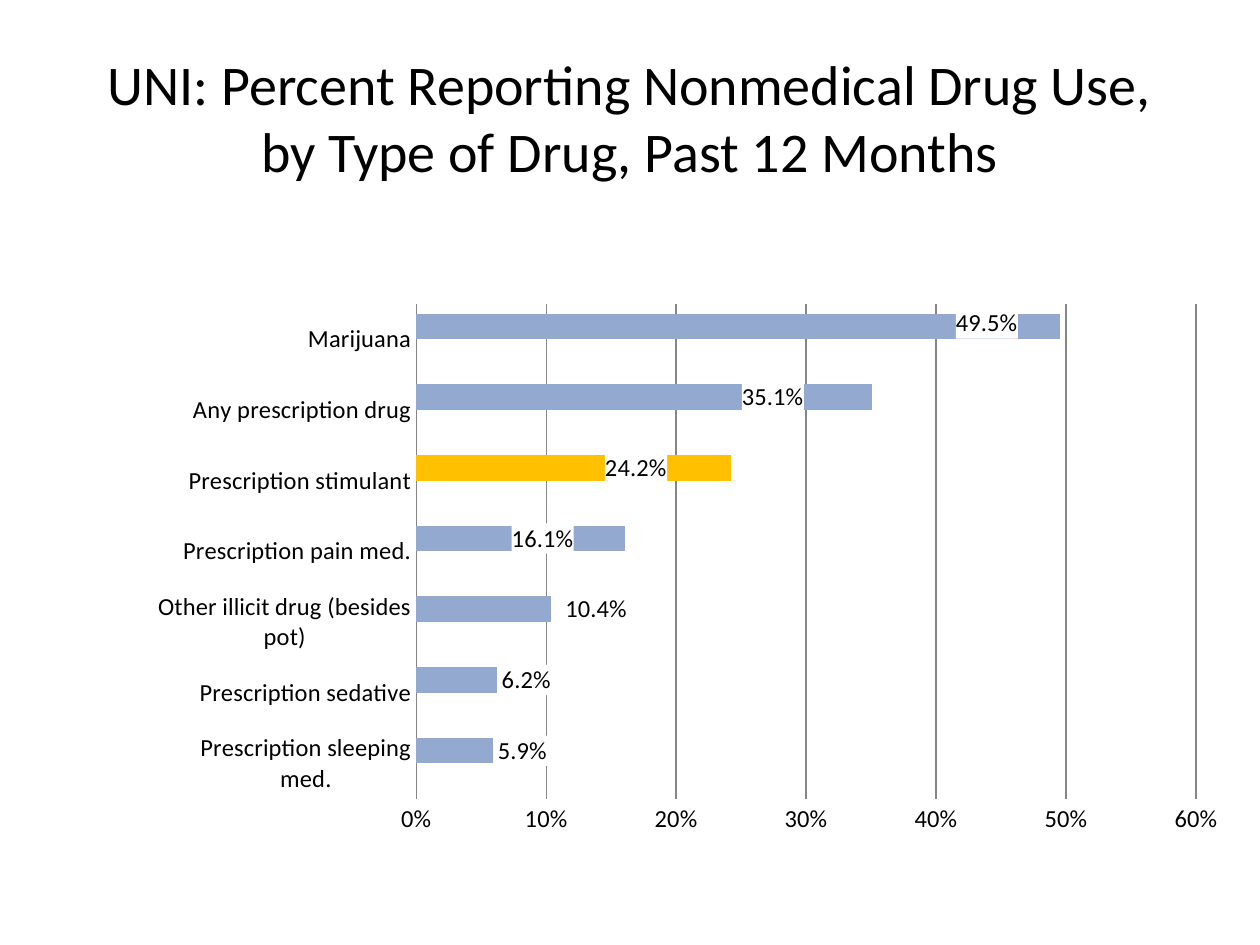
import copy

import pptx
import pptx.chart.data
import pptx.dml.color
import pptx.enum.chart
import pptx.enum.text
import pptx.oxml
import pptx.oxml.ns
import pptx.util

TITLE = "UNI: Percent Reporting Nonmedical Drug Use, by Type of Drug, Past 12 Months"
FONT = "Calibri"
BLACK, WHITE, GRID, BAR, HIGHLIGHT = "000000", "FFFFFF", "868686", "93A9CF", "FFC000"

# drug, share reporting use, label shift (x, y) in px
DRUGS = [
    ("Prescription sleeping med.", 0.059, None),
    ("Prescription sedative", 0.062, None),
    ("Other illicit drug (besides pot)", 0.104, (9, 0)),
    ("Prescription pain med.", 0.161, (-119, 0)),
    ("Prescription stimulant", 0.242, (-131, 0)),
    ("Any prescription drug", 0.351, (-136, 0)),
    ("Marijuana", 0.495, (-109, -3)),
]
HIGHLIGHTED_DRUG = "Prescription stimulant"
TITLE_BOX = (63, 38, 1134, 158)
CHART_BOX = (158, 199, 1074, 662)
PLOT_BOX = (256, 105, 782, 495)  # within the chart


def px(length):
    return pptx.util.Emu(round(length * 914400 / 126))


def rgb(color):
    return pptx.dml.color.RGBColor.from_string(color)


def style_font(font, size):
    font.name = FONT
    font.size = pptx.util.Pt(size)
    font.color.rgb = rgb(BLACK)


def fill(format_, color):
    format_.fill.solid()
    format_.fill.fore_color.rgb = rgb(color)


def manual_layout(lengths, inner=False):
    """Layout element from px lengths (x, y, w, h), given as fractions of the chart."""
    target = '<c:layoutTarget val="inner"/>' if inner else ""
    modes = "".join(f'<c:{key}Mode val="edge"/>' for key in "xy") if inner else ""
    values = "".join(
        f'<c:{key} val="{length / whole:.4f}"/>'
        for key, length, whole in zip("xywh", lengths, CHART_BOX[2:] * 2)
    )
    return pptx.oxml.parse_xml(
        f'<c:layout {pptx.oxml.ns.nsdecls("c")}><c:manualLayout>'
        f"{target}{modes}{values}</c:manualLayout></c:layout>"
    )


def add_title(slide):
    title = slide.shapes.title
    title.left, title.top, title.width, title.height = map(px, TITLE_BOX)
    frame = title.text_frame
    frame.text = TITLE
    frame.word_wrap = True
    frame.vertical_anchor = pptx.enum.text.MSO_ANCHOR.MIDDLE
    paragraph = frame.paragraphs[0]
    paragraph.alignment = pptx.enum.text.PP_ALIGN.CENTER
    style_font(paragraph.runs[0].font, 32)


def add_chart(slide):
    data = pptx.chart.data.CategoryChartData()
    data.categories = [drug for drug, _, _ in DRUGS]
    data.add_series("Series 1", [None] * len(DRUGS))
    data.add_series("Series 2", [share for _, share, _ in DRUGS])
    chart = slide.shapes.add_chart(
        pptx.enum.chart.XL_CHART_TYPE.BAR_CLUSTERED, *map(px, CHART_BOX), data
    ).chart
    chart.has_legend = False
    chart.has_title = False
    style_font(chart.font, 10)

    plot = chart.plots[0]
    plot.gap_width = 75
    plot.overlap = 0
    plot.vary_by_categories = False
    empty, shares = plot.series
    fill(empty.format, "4F81BD")
    fill(shares.format, BAR)
    return chart, shares


def style_axes(chart):
    for axis in (chart.category_axis, chart.value_axis):
        axis.major_tick_mark = axis.minor_tick_mark = pptx.enum.chart.XL_TICK_MARK.NONE
        style_font(axis.tick_labels.font, 14)
    chart.category_axis.format.line.color.rgb = rgb(GRID)
    axis = chart.value_axis
    axis.minimum_scale, axis.maximum_scale, axis.major_unit = 0, 0.6, 0.1
    axis.tick_labels.number_format = "0%"
    axis.tick_labels.number_format_is_linked = False
    axis.format.line.fill.background()
    axis.has_major_gridlines = True
    axis.major_gridlines.format.line.color.rgb = rgb(GRID)
    axis.major_gridlines.format.line.width = pptx.util.Pt(0.75)


def set_plot_area(chart):
    plot_area = chart._chartSpace.xpath("c:chart/c:plotArea")[0]
    for layout in plot_area.xpath("c:layout"):
        plot_area.remove(layout)
    plot_area.insert(0, manual_layout(PLOT_BOX, inner=True))


def hide_leader_lines(group):
    for leader_lines in group.xpath("c:showLeaderLines"):
        leader_lines.set("val", "0")
    group.append(pptx.oxml.parse_xml(
        f'<c:extLst {pptx.oxml.ns.nsdecls("c")}>'
        '<c:ext uri="{CE6537A1-D6FC-4f65-9D91-7224C49458BB}" '
        'xmlns:c15="http://schemas.microsoft.com/office/drawing/2012/chart">'
        '<c15:showLeaderLines val="0"/></c:ext></c:extLst>'
    ))


def label_bars(shares):
    outside_end = pptx.enum.chart.XL_LABEL_POSITION.OUTSIDE_END
    labels = shares.data_labels
    labels.show_value = True
    labels.number_format = "0.0%"
    labels.number_format_is_linked = False
    labels.position = outside_end
    style_font(labels.font, 14)
    group = shares._element.xpath("c:dLbls")[0]
    number_format = group.xpath("c:numFmt")[0]
    white_box = pptx.oxml.parse_xml(
        f'<c:spPr {pptx.oxml.ns.nsdecls("c", "a")}><a:solidFill>'
        f'<a:srgbClr val="{WHITE}"/></a:solidFill></c:spPr>'
    )
    number_format.addnext(white_box)

    for index, (drug, _, shift) in enumerate(DRUGS):
        if drug == HIGHLIGHTED_DRUG:
            fill(shares.points[index].format, HIGHLIGHT)
        if shift is None:
            continue
        label = shares.points[index].data_label
        label.position = outside_end
        style_font(label.font, 14)
        element = group.xpath(f"c:dLbl[c:idx/@val='{index}']")[0]
        for old in element.xpath("c:spPr | c:numFmt | c:layout"):
            element.remove(old)
        parts = [manual_layout(shift),
                 copy.deepcopy(number_format), copy.deepcopy(white_box)]
        for place, part in enumerate(parts, start=1):
            element.insert(place, part)
    hide_leader_lines(group)


def main():
    deck = pptx.Presentation()
    deck.slide_width, deck.slide_height = px(1260), px(945)
    slide = deck.slides.add_slide(deck.slide_layouts[5])
    add_title(slide)
    chart, shares = add_chart(slide)
    style_axes(chart)
    set_plot_area(chart)
    label_bars(shares)
    deck.save("out.pptx")


if __name__ == "__main__":
    main()
